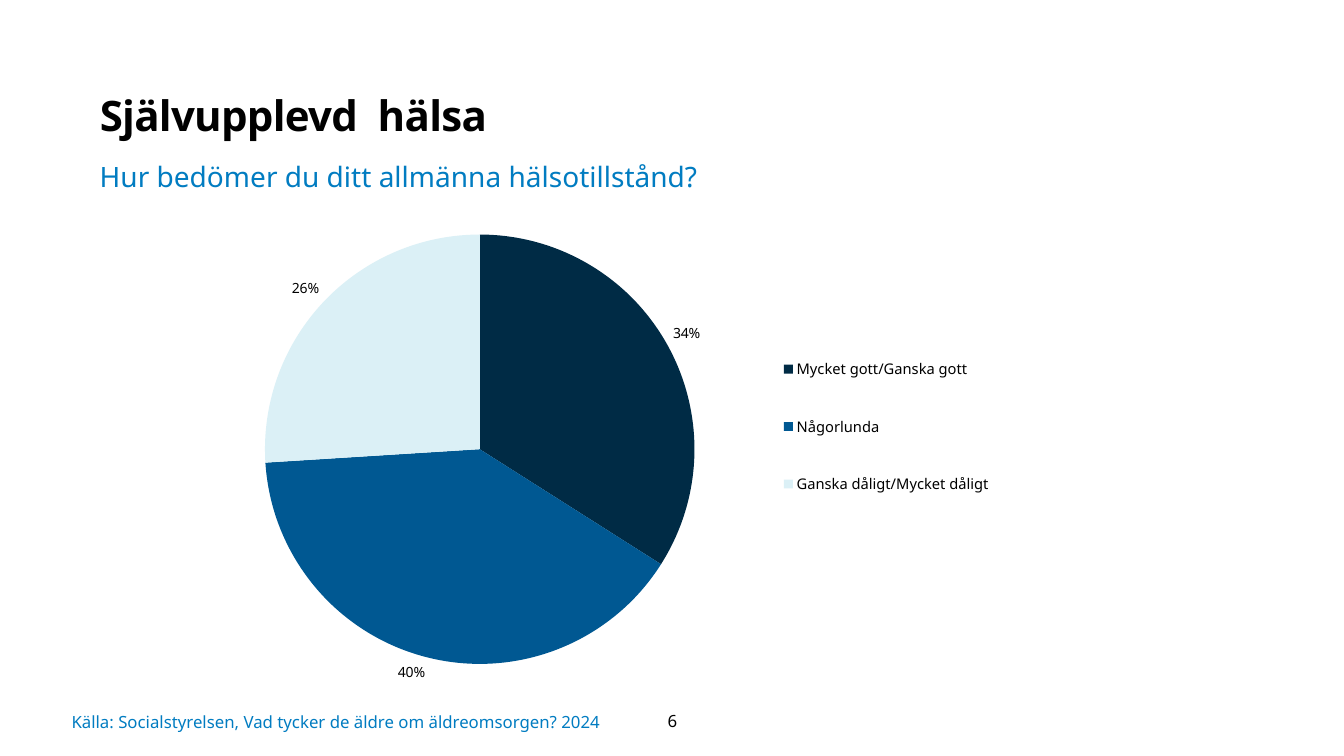
from dataclasses import dataclass

import lxml.etree
import pptx
import pptx.chart.data
import pptx.dml.color
import pptx.enum.chart
import pptx.enum.text
import pptx.oxml.ns
import pptx.util

Inches = pptx.util.Inches
RGBColor = pptx.dml.color.RGBColor
ANCHOR = pptx.enum.text.MSO_ANCHOR
ALIGN = pptx.enum.text.PP_ALIGN

BLACK = RGBColor(0x00, 0x00, 0x00)
BLUE = RGBColor(0x01, 0x7C, 0xC1)
NAVY = RGBColor(0x00, 0x2B, 0x45)
MID_BLUE = RGBColor(0x00, 0x58, 0x92)
PALE_BLUE = RGBColor(0xDB, 0xF0, 0xF6)
FONT = "Noto Sans"


@dataclass
class Label:
    text: str
    at: tuple[float, float, float, float]
    size: float
    color: RGBColor
    bold: bool = False
    spacing: int = 0
    line_spacing: float = 1.0
    align: ALIGN = ALIGN.LEFT
    anchor: ANCHOR = ANCHOR.TOP
    insets: tuple[float, float, float, float] = (0.1, 0.05, 0.1, 0.05)


@dataclass
class Slice:
    name: str
    value: int
    color: RGBColor


LABELS = [
    Label("Självupplevd  hälsa", (0.99, 0.84, 9.83, 0.68), 30, BLACK,
          bold=True, spacing=-50, line_spacing=1.1, insets=(0, 0, 0.1, 0.05)),
    Label("Hur bedömer du ditt allmänna hälsotillstånd?",
          (0.89, 1.53, 7.88, 0.44), 20, BLUE),
    Label("Källa: Socialstyrelsen, Vad tycker de äldre om äldreomsorgen? 2024",
          (0.71, 6.95, 5.45, 0.42), 12, BLUE,
          anchor=ANCHOR.MIDDLE, insets=(0, 0, 0, 0)),
    Label("6", (6.16, 6.95, 1.02, 0.4), 12, BLACK,
          align=ALIGN.CENTER, anchor=ANCHOR.MIDDLE),
]

SLICES = [
    Slice("Mycket gott/Ganska gott", 34, NAVY),
    Slice("Någorlunda", 40, MID_BLUE),
    Slice("Ganska dåligt/Mycket dåligt", 26, PALE_BLUE),
]


def set_font(font, size: float, color: RGBColor, bold: bool = False) -> None:
    values = {"name": FONT, "size": pptx.util.Pt(size), "bold": bold}
    for name, value in values.items():
        setattr(font, name, value)
    font.color.rgb = color


def add_label(s, label: Label) -> None:
    sp = s.shapes.add_textbox(*map(Inches, label.at))
    tf = sp.text_frame
    left, top, right, bottom = map(Inches, label.insets)
    values = {"word_wrap": True, "vertical_anchor": label.anchor,
              "margin_left": left, "margin_top": top,
              "margin_right": right, "margin_bottom": bottom}
    for name, value in values.items():
        setattr(tf, name, value)
    p = tf.paragraphs[0]
    p.alignment = label.align
    p.line_spacing = label.line_spacing
    r = p.add_run()
    r.text = label.text
    set_font(r.font, label.size, label.color, label.bold)
    if label.spacing:
        r.font._element.set("spc", str(label.spacing))


def set_layout(parent, index: int, box: tuple[float, float, float, float],
               inner: bool = False) -> None:
    qn = pptx.oxml.ns.qn
    for old in parent.findall(qn("c:layout")):
        parent.remove(old)
    layout = lxml.etree.Element(qn("c:layout"))
    manual = lxml.etree.SubElement(layout, qn("c:manualLayout"))
    values = {"xMode": "edge", "yMode": "edge"}
    if inner:
        values = {"layoutTarget": "inner", **values}
    values.update(zip("xywh", map(str, box)))
    for name, value in values.items():
        lxml.etree.SubElement(manual, qn(f"c:{name}")).set("val", value)
    parent.insert(index, layout)


def add_health_pie(s, slices: list[Slice]) -> None:
    data = pptx.chart.data.CategoryChartData()
    data.categories = [item.name for item in slices]
    data.add_series("Series 1", [item.value for item in slices])
    chart = s.shapes.add_chart(
        pptx.enum.chart.XL_CHART_TYPE.PIE,
        *map(Inches, (2.07, 2.03, 8.73, 4.84)), data).chart
    chart.has_title = False
    set_font(chart.font, 10, BLACK)

    chart.has_legend = True
    legend = chart.legend
    legend.position = pptx.enum.chart.XL_LEGEND_POSITION.RIGHT
    legend.include_in_layout = False
    set_font(legend.font, 10.5, BLACK)

    plot = chart.plots[0]
    plot.vary_by_categories = True
    plot.has_data_labels = True
    labels = plot.data_labels
    values = {"show_percentage": True, "show_value": False,
              "number_format": "0%", "number_format_is_linked": False,
              "position": pptx.enum.chart.XL_LABEL_POSITION.OUTSIDE_END}
    for name, value in values.items():
        setattr(labels, name, value)
    set_font(labels.font, 10, BLACK)

    for i, item in enumerate(slices):
        fmt = plot.series[0].points[i].format
        fmt.fill.solid()
        fmt.fill.fore_color.rgb = item.color
        fmt.line.fill.background()

    set_layout(chart._chartSpace.chart.plotArea, 0,
               (0.064, 0.061, 0.488, 0.881), inner=True)
    set_layout(legend._element, 1, (0.64, 0.24, 0.26, 0.43))


def main() -> None:
    prs = pptx.Presentation()
    prs.slide_width = Inches(13.33)
    prs.slide_height = Inches(7.5)
    s = prs.slides.add_slide(prs.slide_layouts[6])
    add_health_pie(s, SLICES)
    for label in LABELS:
        add_label(s, label)
    prs.save("out.pptx")


if __name__ == "__main__":
    main()
